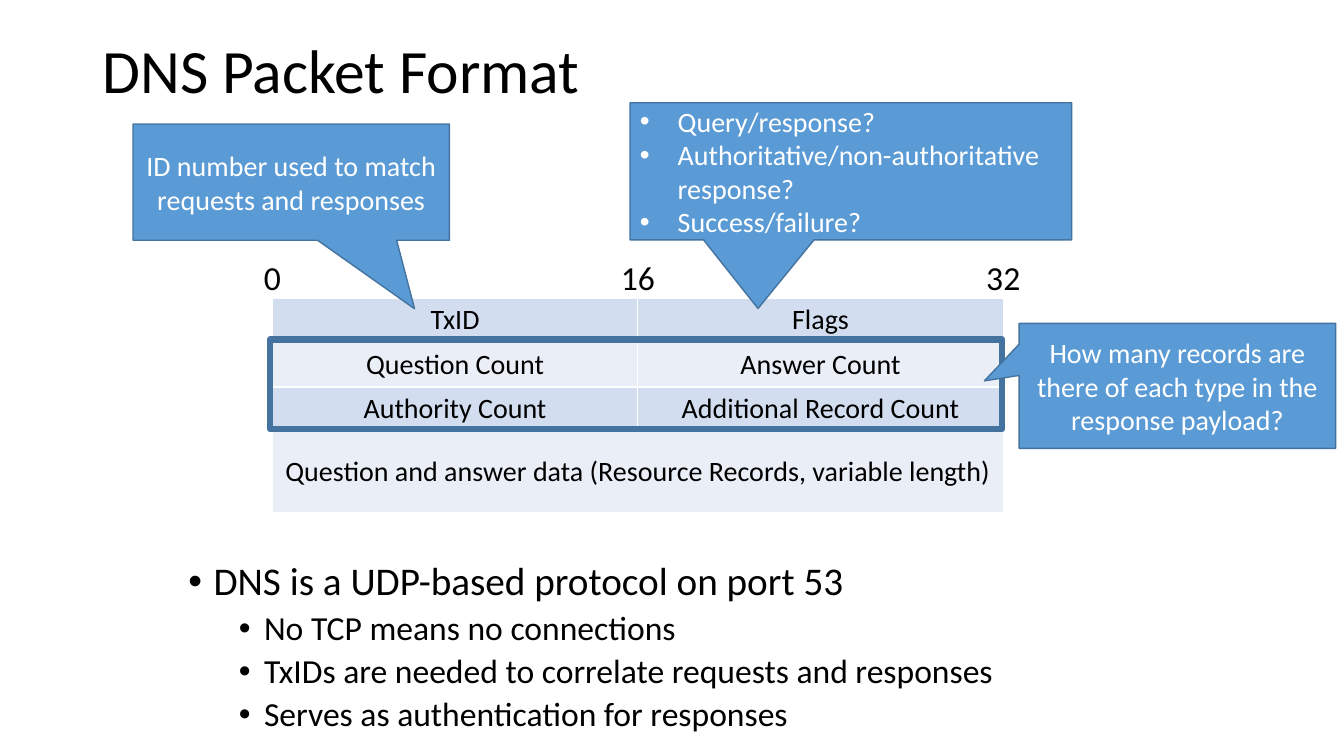
from lxml.etree import SubElement
from pptx import Presentation
from pptx.dml.color import RGBColor
from pptx.enum.shapes import MSO_SHAPE
from pptx.enum.text import MSO_ANCHOR, MSO_AUTO_SIZE, PP_ALIGN
from pptx.oxml.ns import qn
from pptx.util import Pt

FONT = "Calibri"
BLACK, WHITE = "000000", "FFFFFF"
BLUE, EDGE = "5B9BD5", "43739E"
BANDS = "D2DEEF", "EAEFF7"

FIELDS = [
    ("TxID", "Flags"),
    ("Question Count", "Answer Count"),
    ("Authority Count", "Additional Record Count"),
    ("Question and answer data (Resource Records, variable length)",),
]
FLAGS = [
    "Query/response?",
    "Authoritative/non-authoritative response?",
    "Success/failure?",
]
POINTS = [
    "DNS is a UDP-based protocol on port 53",
    "No TCP means no connections",
    "TxIDs are needed to correlate requests and responses",
    "Serves as authentication for responses",
]


def tint(part, code):
    """Give a fill, line or font a colour from a hex string."""
    if hasattr(part, "solid"):
        part.solid()
        part = part.fore_color
    else:
        part = part.color
    part.rgb = RGBColor.from_string(code)


def assign(thing, values):
    for name, value in values.items():
        setattr(thing, name, value)


def place(shape, box):
    assign(shape, dict(zip(("left", "top", "width", "height"), map(Pt, box))))


def bullet(para, left, hang):
    props = para._p.get_or_add_pPr()
    props.set("marL", str(Pt(left)))
    props.set("indent", str(-Pt(hang)))
    SubElement(props, qn("a:buFont")).set("typeface", "Arial")
    SubElement(props, qn("a:buChar")).set("char", "•")


class Page:
    def __init__(self, deck):
        self.slide = deck.slides.add_slide(deck.slide_layouts[1])
        self.shapes = self.slide.shapes
        self.frame = {
            "word_wrap": True,
            "auto_size": MSO_AUTO_SIZE.NONE,
            "vertical_anchor": MSO_ANCHOR.MIDDLE,
        }

    def word(self, para, text, size, color=BLACK, **form):
        """Put one styled run into a paragraph and format the paragraph."""
        run = para.add_run()
        run.text = text
        assign(run.font, {"name": FONT, "size": Pt(size)})
        tint(run.font, color)
        assign(para, form)

    def lines(self, frame, texts):
        """Yield each text with its own paragraph."""
        for i, text in enumerate(texts):
            yield text, frame.add_paragraph() if i else frame.paragraphs[0]

    def title(self, text, box):
        shape = self.shapes.title
        place(shape, box)
        assign(shape.text_frame, self.frame)
        self.word(shape.text_frame.paragraphs[0], text, 44,
                  alignment=PP_ALIGN.LEFT, line_spacing=0.9)

    def body(self, texts, box):
        """Fill the body with one main point and its sub-points."""
        shape = self.slide.placeholders[1]
        place(shape, box)
        assign(shape.text_frame, self.frame)
        for text, para in self.lines(shape.text_frame, texts):
            sub = text != texts[0]
            self.word(para, text, 24 if sub else 28, level=int(sub),
                      line_spacing=0.9, space_before=Pt(5 if sub else 10))
            bullet(para, 54 if sub else 18, 18)

    def table(self, rows, box, heights):
        grid = self.shapes.add_table(len(rows), 2, *map(Pt, box)).table
        grid.first_row = False
        for r, (texts, height) in enumerate(zip(rows, heights)):
            grid.rows[r].height = Pt(height)
            if len(texts) == 1:
                grid.cell(r, 0).merge(grid.cell(r, 1))
            for c, text in enumerate(texts):
                cell = grid.cell(r, c)
                cell.vertical_anchor = MSO_ANCHOR.MIDDLE
                tint(cell.fill, BANDS[r % 2])
                self.word(cell.text_frame.paragraphs[0], text, 20,
                          alignment=PP_ALIGN.CENTER)

    def label(self, text, mid, top):
        """Centre a bit number on a column edge."""
        wide = 14.4 + 12.2 * len(text)
        shape = self.shapes.add_textbox(*map(Pt, (mid - wide / 2, top, wide, 36)))
        shape.text_frame.word_wrap = False
        self.word(shape.text_frame.paragraphs[0], text, 24,
                  alignment=PP_ALIGN.CENTER)

    def shape(self, kind, box, weight):
        shape = self.shapes.add_shape(kind, *map(Pt, box))
        shape.shadow.inherit = False
        tint(shape.line, EDGE)
        shape.line.width = Pt(weight)
        return shape

    def outline(self, box):
        self.shape(MSO_SHAPE.RECTANGLE, box, 4.5).fill.background()

    def callout(self, texts, box, tip):
        shape = self.shape(MSO_SHAPE.RECTANGULAR_CALLOUT, box, 1)
        tint(shape.fill, BLUE)
        shape.adjustments[0], shape.adjustments[1] = tip
        assign(shape.text_frame, self.frame)
        many = len(texts) > 1
        align = PP_ALIGN.LEFT if many else PP_ALIGN.CENTER
        for text, para in self.lines(shape.text_frame, texts):
            self.word(para, text, 20, WHITE, alignment=align)
            if many:
                bullet(para, 27, 27)


def main():
    deck = Presentation()
    assign(deck, {"slide_width": Pt(960), "slide_height": Pt(540)})
    page = Page(deck)
    page.title("DNS Packet Format", (66, 0, 828, 104.4))
    page.table(FIELDS, (194.6, 213, 522, 152), (31.6, 31.6, 31.6, 58))
    for i, bit in enumerate(("0", "16", "32")):
        page.label(bit, 194.6 + 261 * i, 180)
    page.callout(["ID number used to match requests and responses"],
                 (95, 88.6, 226, 83), (0.39, 1.09))
    page.callout(FLAGS, (450, 73.4, 315.4, 98), (-0.21, 1))
    page.body(POINTS, (127.4, 397.4, 708, 131))
    page.outline((193, 242.6, 523, 64))
    page.callout(["How many records are there of each type in the response payload?"],
                 (728, 231, 226, 89.3), (-0.61, -0.04))
    deck.save("out.pptx")


if __name__ == "__main__":
    main()
